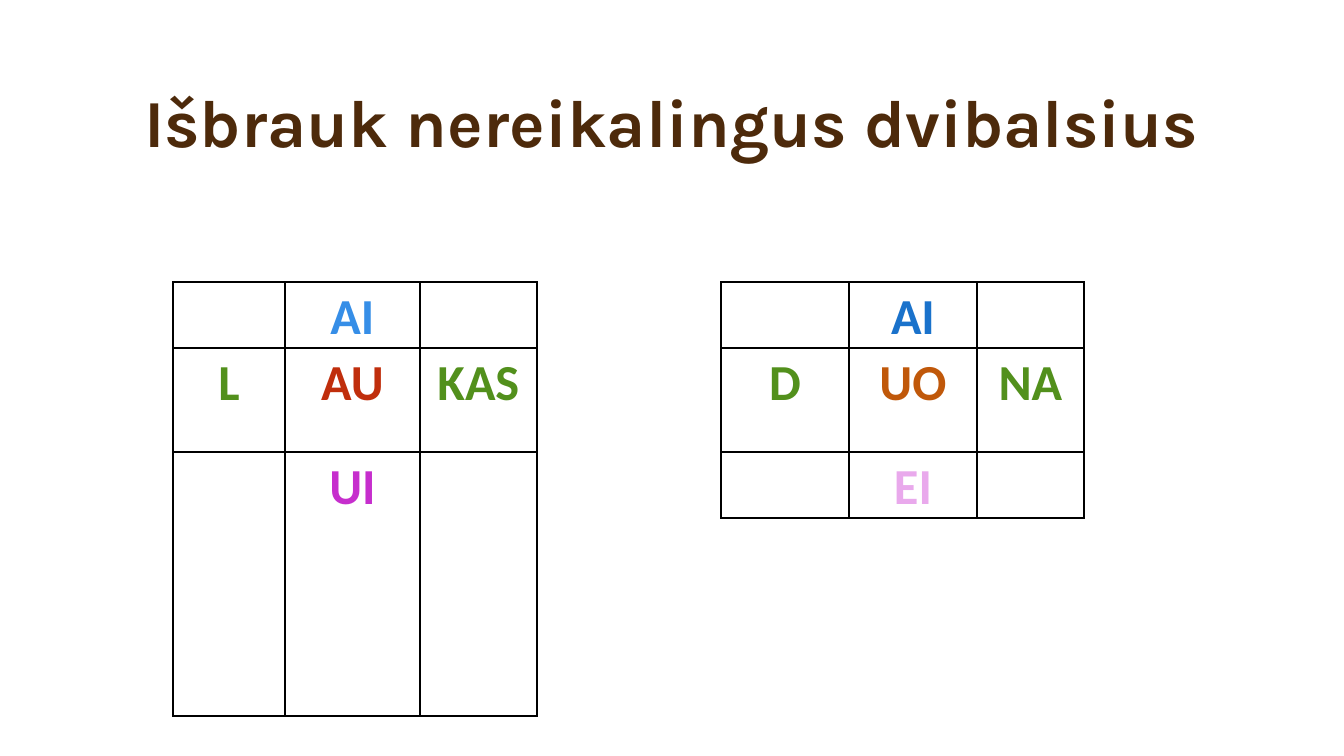
import pptx
import pptx.dml.color
import pptx.enum.text
import pptx.oxml
import pptx.oxml.ns
import pptx.util
from dataclasses import dataclass

EMU_PER_PX = 914400 / 100.8
TITLE_ONLY = 5


def px(length):
    return pptx.util.Emu(round(length * EMU_PER_PX))


@dataclass(frozen=True)
class Theme:
    title_font: str = "Karla"
    cell_font: str = "Calibri"
    title_size: int = 48
    cell_size: int = 36
    brown: str = "4D2A0B"
    green: str = "52901C"
    sky: str = "368EE7"
    blue: str = "1A72CB"
    red: str = "C02E0C"
    orange: str = "C0580A"
    purple: str = "C62ECD"
    pink: str = "E9A9EC"
    border: str = "000000"
    border_width: int = 1


class SlideBuilder:
    def __init__(self, presentation, theme):
        self.theme = theme
        self.slide = presentation.slides.add_slide(presentation.slide_layouts[TITLE_ONLY])

    def style_text(self, paragraph, font_name, size, color, line_spacing):
        paragraph.alignment = pptx.enum.text.PP_ALIGN.CENTER
        paragraph.line_spacing = line_spacing
        for run in paragraph.runs:
            run.font.name = font_name
            run.font.size = pptx.util.Pt(size)
            run.font.bold = True
            run.font.color.rgb = pptx.dml.color.RGBColor.from_string(color)

    def title(self, text, left, top, width, height):
        shape = self.slide.shapes.title
        shape.left, shape.top, shape.width, shape.height = map(px, (left, top, width, height))
        frame = shape.text_frame
        frame.text = text
        frame.word_wrap = True
        frame.auto_size = pptx.enum.text.MSO_AUTO_SIZE.NONE
        frame.vertical_anchor = pptx.enum.text.MSO_ANCHOR.BOTTOM
        self.style_text(frame.paragraphs[0], self.theme.title_font,
                        self.theme.title_size, self.theme.brown, 0.9)

    def border(self, cell):
        properties = cell._tc.get_or_add_tcPr()
        width = pptx.util.Pt(self.theme.border_width)
        for position, side in enumerate(("lnL", "lnR", "lnT", "lnB")):
            properties.insert(position, pptx.oxml.parse_xml(
                f'<a:{side} {pptx.oxml.ns.nsdecls("a")} w="{width}"><a:solidFill>'
                f'<a:srgbClr val="{self.theme.border}"/></a:solidFill></a:{side}>'))

    def cell(self, cell, text, color):
        cell.fill.background()
        cell.margin_left = cell.margin_right = px(7)
        cell.margin_top = cell.margin_bottom = 0
        self.border(cell)
        if text:
            cell.text_frame.text = text
            paragraph = cell.text_frame.paragraphs[0]
            paragraph.space_after = pptx.util.Pt(8)
            self.style_text(paragraph, self.theme.cell_font,
                            self.theme.cell_size, color, 1.07)

    def word_table(self, left, top, widths, heights, word, diphthongs):
        """Draw a word split around a column of (diphthong, colour) choices."""
        frame = self.slide.shapes.add_table(
            len(heights), len(widths), px(left), px(top), px(sum(widths)), px(sum(heights)))
        table = frame.table
        table.first_row = table.horz_banding = False
        for column, width in zip(table.columns, widths):
            column.width = px(width)
        for index, (row, height) in enumerate(zip(table.rows, heights)):
            row.height = px(height)
            start, end = word if index == 1 else ("", "")
            entries = ((start, self.theme.green), diphthongs[index], (end, self.theme.green))
            for cell, (text, color) in zip(row.cells, entries):
                self.cell(cell, text, color)


def main():
    presentation = pptx.Presentation()
    presentation.slide_width, presentation.slide_height = px(1344), px(756)
    theme = Theme()
    builder = SlideBuilder(presentation, theme)
    builder.title("Išbrauk nereikalingus dvibalsius", 117, 33, 1109, 134)
    builder.word_table(173, 282, (112, 135, 117), (66, 104, 264), ("L", "KAS"),
                       (("AI", theme.sky), ("AU", theme.red), ("UI", theme.purple)))
    builder.word_table(721, 282, (128, 128, 107), (66, 104, 66), ("D", "NA"),
                       (("AI", theme.blue), ("UO", theme.orange), ("EI", theme.pink)))
    presentation.save("out.pptx")


if __name__ == "__main__":
    main()
